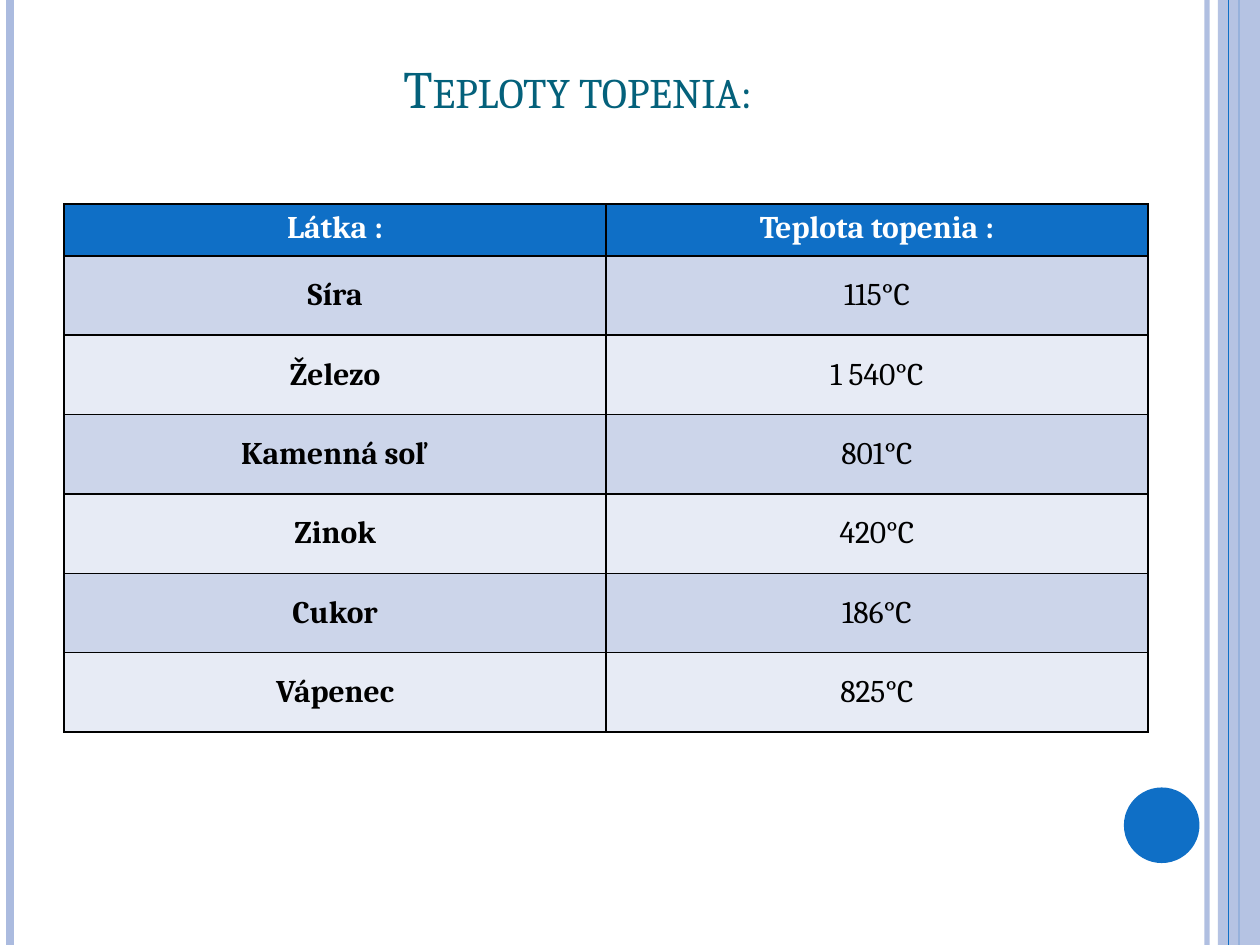
from dataclasses import dataclass

from lxml import etree
from pptx import Presentation
from pptx.dml.color import RGBColor
from pptx.enum.shapes import MSO_CONNECTOR, MSO_SHAPE
from pptx.enum.text import MSO_ANCHOR, PP_ALIGN
from pptx.oxml.ns import qn
from pptx.util import Inches, Pt

STRAIGHT = MSO_CONNECTOR.STRAIGHT
RECTANGLE, OVAL = MSO_SHAPE.RECTANGLE, MSO_SHAPE.OVAL
TOP, MIDDLE, BOTTOM = MSO_ANCHOR.TOP, MSO_ANCHOR.MIDDLE, MSO_ANCHOR.BOTTOM
CENTER = PP_ALIGN.CENTER
WIDTH, HEIGHT = 10, 7.5


@dataclass(frozen=True)
class Theme:
    """Colours, font and type sizes of the slide."""

    font: str = "Cambria"
    title_size: float = 30
    table_size: float = 18
    title: str = "04617B"
    accent: str = "0F6FC6"
    pale: str = "ABBBDF"
    bands: tuple = ("CCD5EA", "E7EBF5")
    light: str = "FFFFFF"
    dark: str = "000000"


THEME = Theme()
HEADER = ("Látka :", "Teplota topenia :")
MELTING_POINTS = (
    ("Síra", "115°C"),
    ("Železo", "1 540°C"),
    ("Kamenná soľ", "801°C"),
    ("Zinok", "420°C"),
    ("Cukor", "186°C"),
    ("Vápenec", "825°C"),
)


def set_alpha(element, percent):
    """Make the colours inside an element partly transparent."""
    for color in element.iter(qn("a:srgbClr")):
        etree.SubElement(color, qn("a:alpha"), val=str(percent * 1000))


def add_stripe(page, x, color, weight, alpha=100):
    """Draw a vertical line over the full height of the slide."""
    stripe = page.shapes.add_connector(
        STRAIGHT, Inches(x), 0, Inches(x), Inches(HEIGHT))
    stripe.line.color.rgb = RGBColor.from_string(color)
    stripe.line.width = Pt(weight)
    properties = stripe.element.spPr
    if alpha < 100:
        set_alpha(properties, alpha)
    etree.SubElement(properties, qn("a:effectLst"))


def add_plain_shape(page, kind, frame, color, alpha=100):
    """Draw a filled shape without outline or shadow."""
    shape = page.shapes.add_shape(kind, *map(Inches, frame))
    shape.shadow.inherit = False
    shape.fill.solid()
    shape.fill.fore_color.rgb = RGBColor.from_string(color)
    shape.line.fill.background()
    if alpha < 100:
        set_alpha(shape.element.spPr, alpha)


def write_text(para, text, size, color, bold=False):
    """Write a centred paragraph in the theme font."""
    para.text = text
    para.alignment = CENTER
    font = para.font
    font.name, font.size, font.bold = THEME.font, Pt(size), bold
    font.color.rgb = RGBColor.from_string(color)


def add_title(page, text, frame):
    """Add the title in small capitals."""
    box = page.shapes.add_textbox(*map(Inches, frame))
    box.text_frame.word_wrap = True
    box.text_frame.vertical_anchor = BOTTOM
    para = box.text_frame.paragraphs[0]
    write_text(para, text, THEME.title_size, THEME.title)
    for span in para.runs:
        span.font.size = Pt(THEME.title_size)
        span.font._element.set("cap", "small")


def add_borders(cell):
    """Draw a thin dark line on all four sides of a cell."""
    properties = cell._tc.get_or_add_tcPr()
    for side in ("lnL", "lnR", "lnT", "lnB"):
        line = etree.SubElement(properties, qn(f"a:{side}"), w=str(Pt(1)))
        fill = etree.SubElement(line, qn("a:solidFill"))
        etree.SubElement(fill, qn("a:srgbClr"), val=THEME.dark)


def fill_cell(cell, text, fill, color, bold, anchor):
    """Style one table cell and write its text."""
    add_borders(cell)
    cell.fill.solid()
    cell.fill.fore_color.rgb = RGBColor.from_string(fill)
    cell.vertical_anchor = anchor
    write_text(cell.text_frame.paragraphs[0], text,
               THEME.table_size, color, bold)


def add_melting_table(page, left, top, column, header_height, row_height):
    """Add the table of substances and their melting points."""
    rows = (HEADER, *MELTING_POINTS)
    height = header_height + row_height * len(MELTING_POINTS)
    table = page.shapes.add_table(
        len(rows), len(HEADER), Inches(left), Inches(top),
        Inches(column * len(HEADER)), Inches(height)).table
    for r, values in enumerate(rows):
        is_header = r == 0
        table.rows[r].height = Inches(header_height if is_header else row_height)
        fill = THEME.accent if is_header else THEME.bands[(r - 1) % 2]
        color = THEME.light if is_header else THEME.dark
        anchor = TOP if is_header else MIDDLE
        for c, text in enumerate(values):
            fill_cell(table.cell(r, c), text, fill, color,
                      is_header or c == 0, anchor)


def add_decoration(page):
    """Draw the edge stripes, the side band and the disc."""
    band = WIDTH / 30
    add_stripe(page, 9.58, THEME.pale, 3, 93)
    add_stripe(page, 0.08, THEME.pale, 4.5)
    add_stripe(page, WIDTH - band / 2, THEME.accent, 1.5)
    add_plain_shape(page, RECTANGLE, (WIDTH - band, 0, band, HEIGHT),
                    THEME.pale, 87)
    add_stripe(page, WIDTH - band * 3 / 4, THEME.accent, 0.75)
    add_plain_shape(page, OVAL, (8.92, HEIGHT * 5 / 6, 0.6, 0.6), THEME.accent)


def main():
    """Build the slide and save it."""
    deck = Presentation()
    deck.slide_width, deck.slide_height = Inches(WIDTH), Inches(HEIGHT)
    page = deck.slides.add_slide(deck.slide_layouts[6])
    add_decoration(page)
    add_title(page, "Teploty topenia:", (0.5, 0.3, 8.17, 0.69))
    add_melting_table(page, 0.51, 1.62, 4.3, 0.41, 0.63)
    deck.save("out.pptx")


if __name__ == "__main__":
    main()
